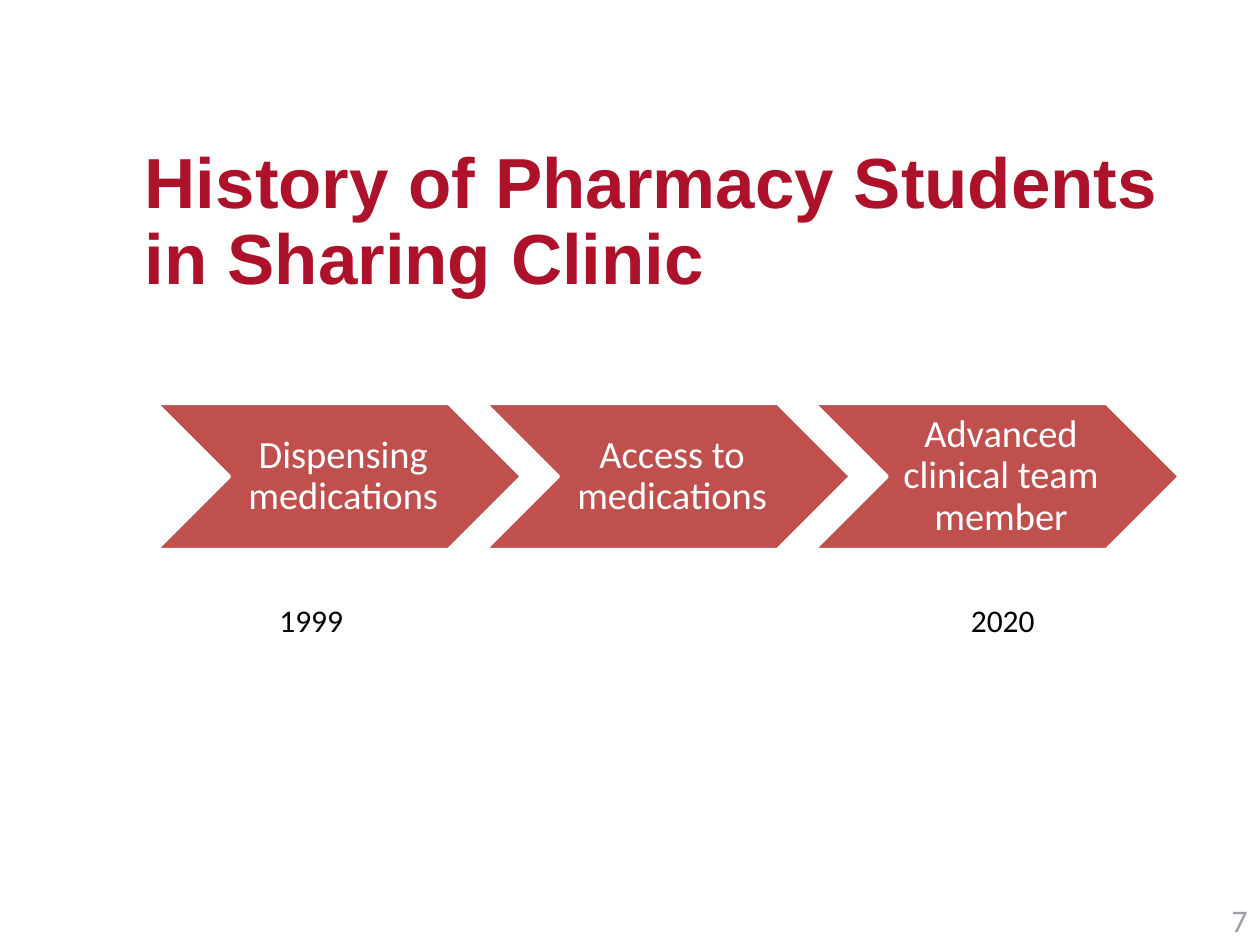
from dataclasses import dataclass

from pptx import Presentation
from pptx.dml.color import RGBColor
from pptx.enum.shapes import MSO_SHAPE
from pptx.enum.text import MSO_ANCHOR, PP_ALIGN
from pptx.slide import Slide
from pptx.util import Cm, Pt

COLOURS = {
    "title": "AD122A",
    "chevron": "C0504D",
    "white": "FFFFFF",
    "black": "000000",
    "grey": "989EA3",
}
STAGES = ["Dispensing medications", "Access to medications", "Advanced clinical team member"]
STAGE_LEFT, STAGE_TOP, STAGE_PITCH = 3.15, 8.13, 6.63
STAGE_WIDTH, STAGE_HEIGHT = 7.37, 2.95
LABEL_INSET = STAGE_HEIGHT / 2


@dataclass
class Label:
    text: str
    left: float
    top: float
    width: float
    height: float
    colour: str
    size: float = 18
    font: str = "Calibri"
    bold: bool = False
    alignment: PP_ALIGN = PP_ALIGN.CENTER
    anchor: MSO_ANCHOR = MSO_ANCHOR.TOP
    line_spacing: float = 1.0
    margins: tuple[float, float, float, float] = (0.25, 0.13, 0.25, 0.13)


def colour(name: str) -> RGBColor:
    return RGBColor.from_string(COLOURS[name])


def add_label(slide: Slide, label: Label) -> None:
    shape = slide.shapes.add_textbox(
        Cm(label.left), Cm(label.top), Cm(label.width), Cm(label.height)
    )
    text_frame = shape.text_frame
    text_frame.word_wrap = True
    text_frame.vertical_anchor = label.anchor
    left, top, right, bottom = label.margins
    text_frame.margin_left, text_frame.margin_top = Cm(left), Cm(top)
    text_frame.margin_right, text_frame.margin_bottom = Cm(right), Cm(bottom)
    text_frame.text = label.text
    paragraph = text_frame.paragraphs[0]
    paragraph.alignment = label.alignment
    paragraph.line_spacing = label.line_spacing
    font = paragraph.runs[0].font
    font.name = label.font
    font.size = Pt(label.size)
    font.bold = label.bold
    font.color.rgb = colour(label.colour)


def add_stage(slide: Slide, text: str, left: float) -> None:
    shape = slide.shapes.add_shape(
        MSO_SHAPE.CHEVRON, Cm(left), Cm(STAGE_TOP), Cm(STAGE_WIDTH), Cm(STAGE_HEIGHT)
    )
    shape.shadow.inherit = False
    shape.fill.solid()
    shape.fill.fore_color.rgb = colour("chevron")
    shape.line.color.rgb = colour("white")
    shape.line.width = Pt(2)
    add_label(slide, Label(
        text, left + LABEL_INSET, STAGE_TOP, STAGE_WIDTH - 2 * LABEL_INSET, STAGE_HEIGHT,
        "white", size=22, anchor=MSO_ANCHOR.MIDDLE, line_spacing=0.9,
        margins=(0.25, 0.08, 0.08, 0.08),
    ))


def main() -> None:
    presentation = Presentation()
    presentation.slide_width, presentation.slide_height = Cm(25.4), Cm(19.05)
    slide = presentation.slides.add_slide(presentation.slide_layouts[6])

    add_label(slide, Label(
        "History of Pharmacy Students in Sharing Clinic", 2.67, 3.33, 21.13, 2.72,
        "title", size=40.5, font="Arial", bold=True, alignment=PP_ALIGN.LEFT,
        anchor=MSO_ANCHOR.BOTTOM, line_spacing=0.9, margins=(0.25, 0, 0.25, 0),
    ))
    for index, text in enumerate(STAGES):
        add_stage(slide, text, STAGE_LEFT + index * STAGE_PITCH)
    for year, left in (("1999", 4.32), ("2020", 18.26)):
        add_label(slide, Label(year, left, 11.99, 3.91, 1.02, "black"))
    add_label(slide, Label(
        "7", 21.89, 18.03, 3.51, 1.02, "grey", alignment=PP_ALIGN.RIGHT
    ))

    presentation.save("out.pptx")


if __name__ == "__main__":
    main()
